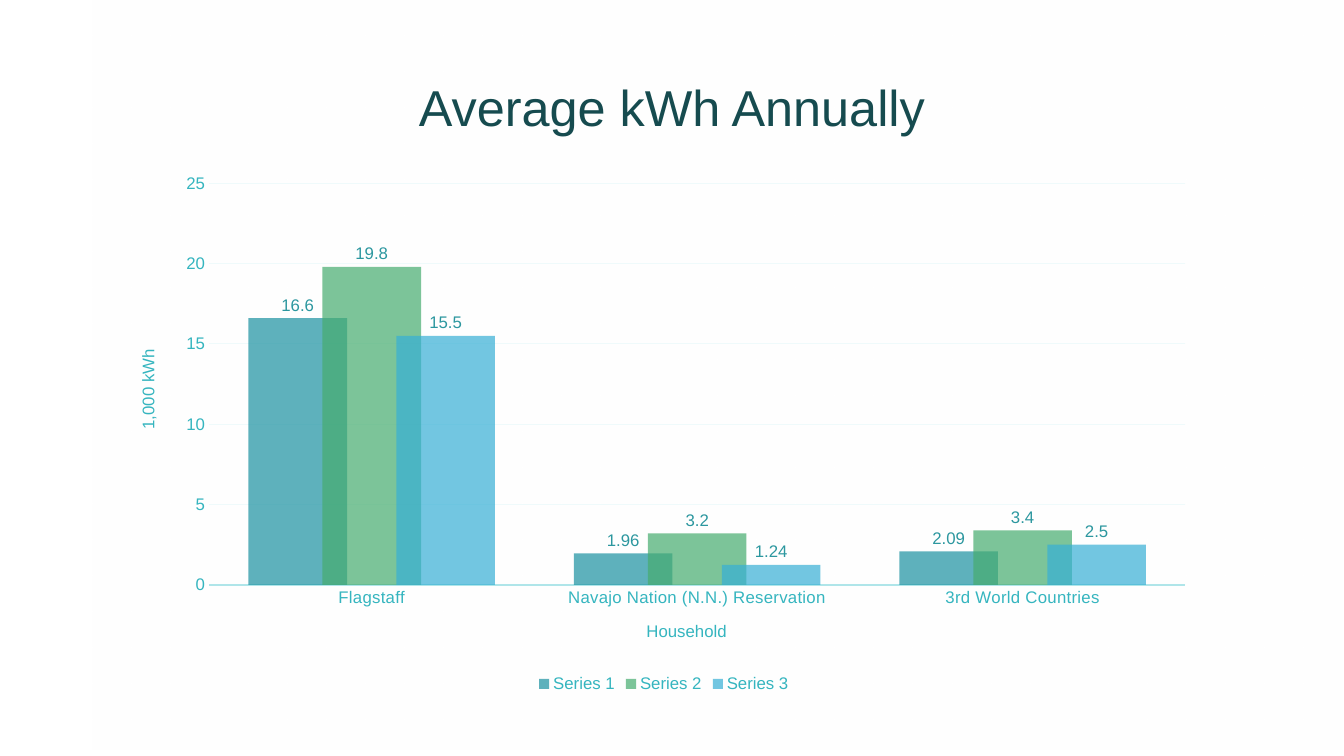
from lxml import etree
from pptx import Presentation
from pptx.chart.data import CategoryChartData
from pptx.dml.color import RGBColor
from pptx.enum.chart import XL_CHART_TYPE as ChartType
from pptx.enum.chart import XL_LABEL_POSITION as LabelPos
from pptx.enum.chart import XL_LEGEND_POSITION as LegendPos
from pptx.enum.chart import XL_TICK_MARK as Tick
from pptx.enum.shapes import MSO_SHAPE as Shape
from pptx.enum.text import MSO_ANCHOR as Anchor
from pptx.enum.text import PP_ALIGN as Align
from pptx.oxml.ns import qn
from pptx.util import Cm, Pt

CATEGORIES = ["Flagstaff", "Navajo Nation (N.N.) Reservation", "3rd World Countries"]
SERIES = [
    ("Series 1", (16.6, 1.96, 2.09), "1B91A1"),
    ("Series 2", (19.8, 3.2, 3.4), "46AC6F"),
    ("Series 3", (15.5, 1.24, 2.5), "37AFD5"),
]


def rgb(hex_text):
    return RGBColor.from_string(hex_text)


def set_alpha(element, *percents):
    """Set the opacity of each colour inside the element, in order."""
    for clr, percent in zip(element.iter(qn("a:srgbClr")), percents):
        etree.SubElement(clr, qn("a:alpha")).set("val", str(percent * 1000))


def place(parent, index, **fractions):
    """Give a chart part a manual layout, in fractions of the chart area."""
    for old in parent.findall(qn("c:layout")):
        parent.remove(old)
    layout = etree.Element(qn("c:layout"))
    manual = etree.SubElement(layout, qn("c:manualLayout"))
    if "w" in fractions:
        etree.SubElement(manual, qn("c:layoutTarget")).set("val", "inner")
    for side in "xy":
        etree.SubElement(manual, qn(f"c:{side}Mode")).set("val", "edge")
    for name, value in fractions.items():
        etree.SubElement(manual, qn(f"c:{name}")).set("val", str(value))
    parent.insert(index, layout)


class SlideBuilder:
    FONT = "Arial"
    WHITE, DARK, AXIS, LABEL = "FFFFFF", "164B4F", "35B5BF", "2C979F"
    AXIS_LINE, GRID = "AFE5E9", "EFFAFB"

    def __init__(self, prs):
        self.slide = prs.slides.add_slide(prs.slide_layouts[6])

    def style(self, font, size, color):
        font.name, font.size, font.bold = self.FONT, Pt(size), False
        font.color.rgb = rgb(color)

    def fading_panel(self, left, top, width, height):
        sp = self.slide.shapes.add_shape(Shape.RECTANGLE, left, top, width, height)
        sp.shadow.inherit = False
        sp.line.fill.background()
        sp.fill.gradient()
        sp.fill.gradient_angle = 270
        for stop, position in zip(sp.fill.gradient_stops, (0, 1)):
            stop.color.rgb, stop.position = rgb(self.WHITE), position
        set_alpha(sp._element, 60, 0)

    def title(self, text, left, top, width, height):
        tf = self.slide.shapes.add_textbox(left, top, width, height).text_frame
        tf.word_wrap = True
        tf.vertical_anchor = Anchor.BOTTOM
        p = tf.paragraphs[0]
        p.text, p.alignment, p.line_spacing = text, Align.CENTER, 0.9
        self.style(p.font, 36, self.DARK)

    def axis(self, axis, title, x, y):
        axis.major_tick_mark = axis.minor_tick_mark = Tick.NONE
        self.style(axis.tick_labels.font, 12, self.AXIS)
        p = axis.axis_title.text_frame.paragraphs[0]
        p.text = title
        self.style(p.font, 12, self.AXIS)
        place(axis.axis_title._element, 1, x=x, y=y)

    def series(self, series, color):
        fill = series.format.fill
        fill.solid()
        fill.fore_color.rgb = rgb(color)
        set_alpha(series._element, 70)
        labels = series.data_labels
        labels.show_value, labels.position = True, LabelPos.OUTSIDE_END
        self.style(labels.font, 12, self.LABEL)

    def column_chart(self, left, top, width, height):
        data = CategoryChartData()
        data.categories = CATEGORIES
        for name, values, _ in SERIES:
            data.add_series(name, values)
        chart = self.slide.shapes.add_chart(
            ChartType.COLUMN_CLUSTERED, left, top, width, height, data).chart
        self.style(chart.font, 10, self.DARK)
        chart.has_title = False
        chart.has_legend = True
        chart.legend.position = LegendPos.BOTTOM
        chart.legend.include_in_layout = False
        self.style(chart.legend.font, 12, self.AXIS)

        plot = chart.plots[0]
        plot.gap_width, plot.overlap, plot.vary_by_categories = 80, 25, False
        for series, (_, _, color) in zip(plot.series, SERIES):
            self.series(series, color)

        households, energy = chart.category_axis, chart.value_axis
        self.axis(households, "Household", 0.481, 0.853)
        households.format.line.color.rgb = rgb(self.AXIS_LINE)
        households.format.line.width = Pt(1.25)
        letters = households._element.find(qn("c:txPr")).find(".//" + qn("a:defRPr"))
        letters.set("spc", "20")

        self.axis(energy, "1,000 kWh", 0.008, 0.348)
        energy.minimum_scale, energy.maximum_scale, energy.major_unit = 0, 25, 5
        energy.format.line.fill.background()
        grid = energy.major_gridlines.format.line
        grid.color.rgb, grid.width = rgb(self.GRID), Pt(0.75)
        plot_area = households._element.getparent()
        place(plot_area, 0, x=0.077, y=0.045, w=0.908, h=0.747)


def main():
    prs = Presentation()
    prs.slide_width, prs.slide_height = Cm(33.87), Cm(19.05)
    builder = SlideBuilder(prs)
    builder.fading_panel(Cm(2.32), Cm(0), Cm(31.52), Cm(19.05))
    builder.title("Average kWh Annually", Cm(3.6), Cm(0.41), Cm(26.67), Cm(3.18))
    builder.column_chart(Cm(3.18), Cm(4.01), Cm(27.1), Cm(13.55))
    prs.save("out.pptx")


if __name__ == "__main__":
    main()
